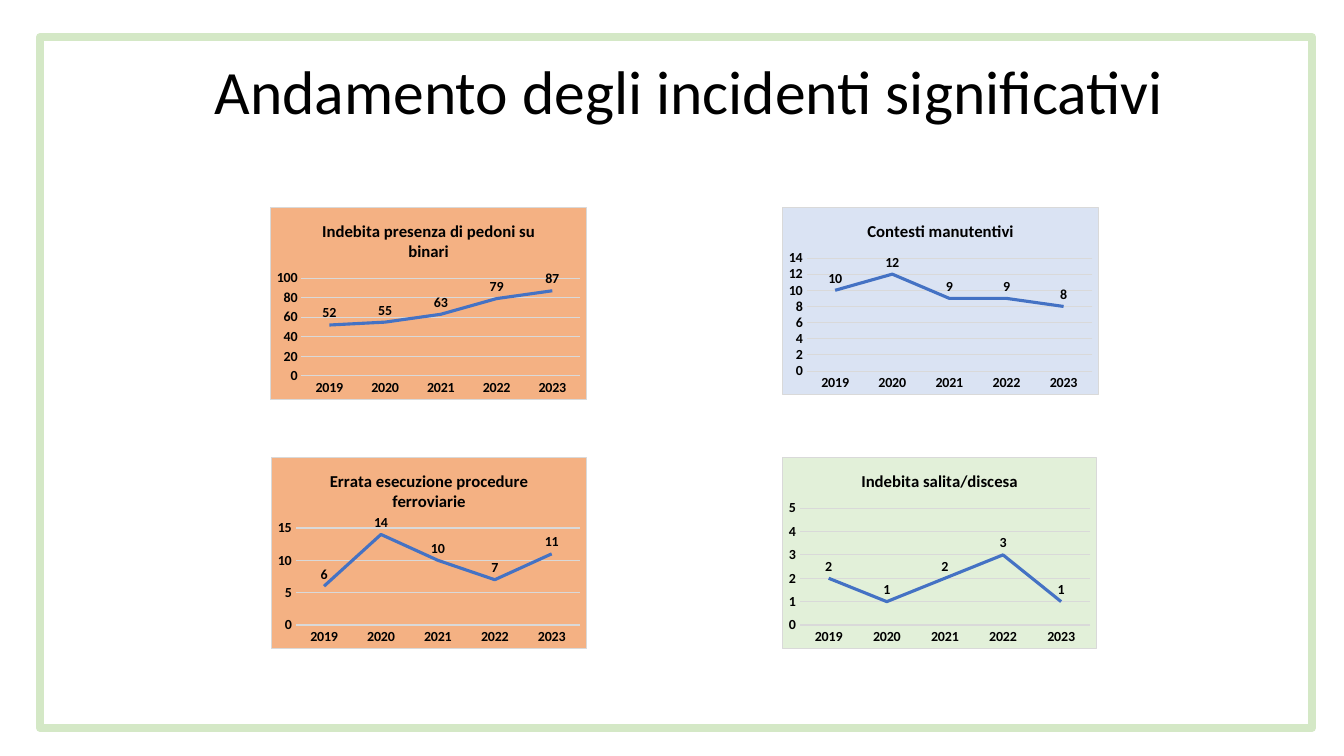
from lxml import etree
from pptx import Presentation
from pptx.chart.data import CategoryChartData
from pptx.dml.color import RGBColor
from pptx.enum.chart import XL_CHART_TYPE, XL_LABEL_POSITION, XL_TICK_MARK
from pptx.enum.shapes import MSO_SHAPE
from pptx.enum.text import MSO_ANCHOR, PP_ALIGN
from pptx.oxml import parse_xml
from pptx.oxml.ns import nsdecls, qn
from pptx.util import Pt

PX = 914400 / 100.8
LINE = XL_CHART_TYPE.LINE
ABOVE = XL_LABEL_POSITION.ABOVE
NO_TICK = XL_TICK_MARK.NONE
RECTANGLE = MSO_SHAPE.RECTANGLE
MIDDLE = MSO_ANCHOR.MIDDLE
CENTER = PP_ALIGN.CENTER

FONT = "Calibri"
BLACK = RGBColor(0x00, 0x00, 0x00)
FRAME_GREEN = RGBColor(0xD4, 0xE8, 0xC6)
GRID_GRAY = RGBColor(0xD9, 0xD9, 0xD9)
SERIES_BLUE = RGBColor(0x44, 0x72, 0xC4)
ORANGE = RGBColor(0xF4, 0xB1, 0x83)
PALE_BLUE = RGBColor(0xDA, 0xE3, 0xF3)
PALE_GREEN = RGBColor(0xE2, 0xF0, 0xD9)

YEARS = ["2019", "2020", "2021", "2022", "2023"]
CHARTS = [
    ("Indebita presenza di pedoni su binari", (52, 55, 63, 79, 87), ORANGE, (270, 207, 317, 193), None),
    ("Contesti manutentivi", (10, 12, 9, 9, 8), PALE_BLUE, (782, 207, 317, 188), None),
    ("Errata esecuzione procedure ferroviarie", (6, 14, 10, 7, 11), ORANGE, (271, 457, 316, 192), None),
    ("Indebita salita/discesa", (2, 1, 2, 3, 1), PALE_GREEN, (782, 457, 315, 192), 5),
]


def emu(box):
    """Turn px lengths into EMU."""
    return [round(length * PX) for length in box]


def style_font(font, size, bold):
    """Apply the slide's typeface in black."""
    font.name, font.size, font.bold = FONT, Pt(size), bold
    font.color.rgb = BLACK


def style_line(line, color, width):
    """Give a line its colour and width in points."""
    line.color.rgb = color
    line.width = Pt(width)


def add_frame(page, box):
    """Draw the green frame around the page."""
    frame = page.shapes.add_shape(RECTANGLE, *emu(box))
    frame.shadow.inherit = False
    frame.fill.background()
    style_line(frame.line, FRAME_GREEN, 5.75)
    etree.SubElement(frame.line._get_or_add_ln(), qn("a:round"))


def add_title(page, box, text):
    """Place the centred page title."""
    text_frame = page.shapes.add_textbox(*emu(box)).text_frame
    text_frame.word_wrap = True
    text_frame.vertical_anchor = MIDDLE
    para = text_frame.paragraphs[0]
    para.text = text
    para.alignment = CENTER
    para.line_spacing = 0.9
    style_font(para.font, 44, False)


def fill_chart(chart, color):
    """Give the chart area a fill and a thin grey border."""
    area = parse_xml(
        f'<c:spPr {nsdecls("c", "a")}>'
        f'<a:solidFill><a:srgbClr val="{color}"/></a:solidFill>'
        f'<a:ln w="{Pt(0.75)}"><a:solidFill><a:srgbClr val="{GRID_GRAY}"/></a:solidFill></a:ln>'
        "</c:spPr>"
    )
    chart.element.find(qn("c:chart")).addnext(area)


def add_line_chart(page, box, title, values, color, maximum):
    """Place one incident trend chart in its box."""
    data = CategoryChartData()
    data.categories = YEARS
    data.add_series(title, values)
    chart = page.shapes.add_chart(LINE, *emu(box), data).chart
    style_font(chart.font, 10, True)
    fill_chart(chart, color)
    chart.has_legend = False
    chart.has_title = True
    para = chart.chart_title.text_frame.paragraphs[0]
    para.text = title
    style_font(para.font, 12, True)
    chart.chart_title.include_in_layout = False

    years, counts = chart.category_axis, chart.value_axis
    for axis in (years, counts):
        axis.major_tick_mark = axis.minor_tick_mark = NO_TICK
    style_line(years.format.line, GRID_GRAY, 0.75)
    counts.format.line.fill.background()
    counts.has_major_gridlines = True
    style_line(counts.major_gridlines.format.line, GRID_GRAY, 0.75)
    if maximum:
        counts.minimum_scale, counts.maximum_scale = 0, maximum
        counts.major_unit = 1

    plot = chart.plots[0]
    plot.vary_by_categories = False
    series = plot.series[0]
    series.smooth = False
    style_line(series.format.line, SERIES_BLUE, 2.25)
    labels = series.data_labels
    labels.show_value = True
    labels.position = ABOVE
    style_font(labels.font, 10, True)


def main():
    """Build and save the slide."""
    deck = Presentation()
    deck.slide_width, deck.slide_height = emu((1344, 756))
    page = deck.slides.add_slide(deck.slide_layouts[6])
    add_frame(page, (40, 37, 1272, 691))
    add_title(page, (46, 46, 1287, 98), "Andamento degli incidenti significativi")
    for title, values, color, box, maximum in CHARTS:
        add_line_chart(page, box, title, values, color, maximum)
    deck.save("out.pptx")


if __name__ == "__main__":
    main()
